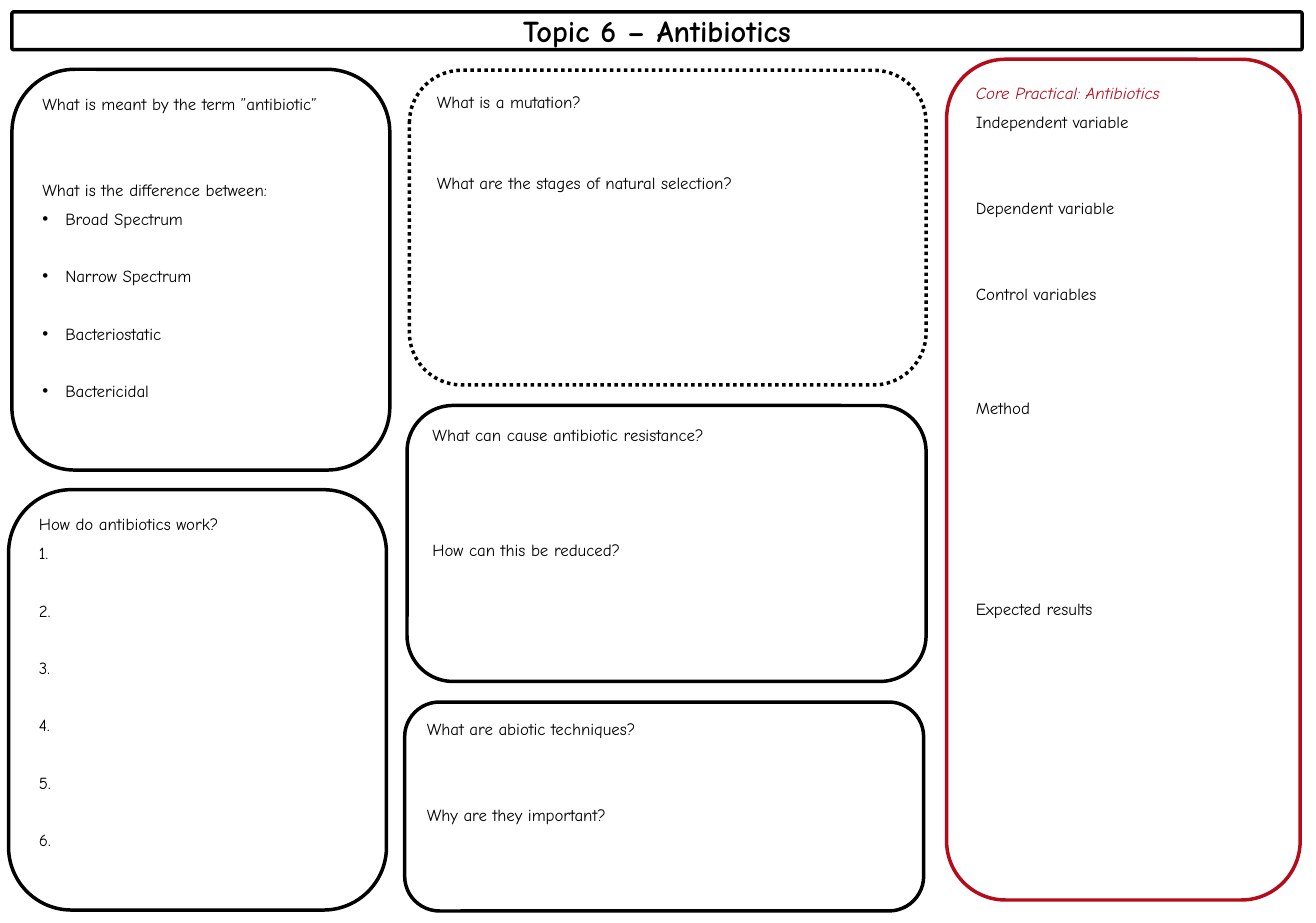
from lxml.etree import SubElement
from pptx import Presentation
from pptx.dml.color import RGBColor
from pptx.enum.dml import MSO_LINE
from pptx.enum.shapes import MSO_SHAPE
from pptx.enum.text import MSO_ANCHOR, PP_ALIGN
from pptx.oxml.ns import qn
from pptx.util import Cm, Pt

BLACK = RGBColor(0x00, 0x00, 0x00)
WHITE = RGBColor(0xFF, 0xFF, 0xFF)
RED = RGBColor(0xB5, 0x0B, 0x1B)
FONT = "Comic Neue"
LINE_HEIGHT = 12  # points taken by one line of 10 pt text


def add_frame(s, box, color=BLACK):
    """Add a rounded outline at box (left, top, width, height in cm)."""
    sp = s.shapes.add_shape(MSO_SHAPE.ROUNDED_RECTANGLE, *map(Cm, box))
    sp.shadow.inherit = False
    sp.fill.background()
    sp.line.color.rgb = color
    sp.line.width = Pt(2.08)
    sp.text_frame.word_wrap = True
    return sp


def write(p, text, size=10, color=BLACK, bold=False, italic=False):
    p.text = text
    for r in p.runs:
        r.font.name = FONT
        r.font.size = Pt(size)
        r.font.color.rgb = color
        r.font.bold = bold
        r.font.italic = italic


def add_list_mark(p, mark):
    """Give a paragraph a hanging bullet or an automatic number."""
    pPr = p._p.get_or_add_pPr()
    indent = Cm(0.48 if mark == "bullet" else 0.64)
    pPr.set("marL", str(indent))
    pPr.set("indent", str(-indent))
    if mark == "bullet":
        SubElement(pPr, qn("a:buFont")).set("typeface", "Arial")
        SubElement(pPr, qn("a:buChar")).set("char", "•")
    else:
        SubElement(pPr, qn("a:buFont")).set("typeface", FONT)
        SubElement(pPr, qn("a:buAutoNum")).set("type", "arabicPeriod")


def add_title(s, box, text):
    sp = add_frame(s, box)
    sp.adjustments[0] = 0.045
    tf = sp.text_frame
    tf.vertical_anchor = MSO_ANCHOR.MIDDLE
    p = tf.paragraphs[0]
    p.alignment = PP_ALIGN.CENTER
    write(p, text, size=18, bold=True)


def add_panel(s, box, prompts, color=BLACK, heading=None, dotted=False, spacing=5):
    """Add a panel; each prompt is (text, answer lines above it, list mark)."""
    sp = add_frame(s, box, color)
    sp.fill.solid()
    sp.fill.fore_color.rgb = WHITE
    if dotted:
        sp.line.dash_style = MSO_LINE.ROUND_DOT
    tf = sp.text_frame
    tf.vertical_anchor = MSO_ANCHOR.TOP
    p = tf.paragraphs[0]
    p.alignment = PP_ALIGN.LEFT
    if heading:
        write(p, heading, color=color, italic=True)
    for i, (text, lines, mark) in enumerate(prompts):
        if i or heading:
            p = tf.add_paragraph()
            p.alignment = PP_ALIGN.LEFT
            p.space_before = Pt(lines * (LINE_HEIGHT + spacing) + spacing)
        write(p, text)
        if mark:
            add_list_mark(p, mark)


def main():
    prs = Presentation()
    prs.slide_width, prs.slide_height = Cm(27.51), Cm(19.3)
    s = prs.slides.add_slide(prs.slide_layouts[6])

    add_title(s, (0.25, 0.25, 26.97, 0.79), "Topic 6 – Antibiotics")

    # Left column
    add_panel(s, (0.25, 1.45, 7.9, 8.38), [
        ("What is meant by the term ”antibiotic”", 0, None),
        ("What is the difference between:", 2, None),
        ("Broad Spectrum", 0, "bullet"),
        ("Narrow Spectrum", 1, "bullet"),
        ("Bacteriostatic", 1, "bullet"),
        ("Bactericidal", 1, "bullet"),
    ])
    steps = [(" ", min(i, 1), "number") for i in range(6)]
    add_panel(s, (0.18, 10.24, 7.9, 8.79),
              [("How do antibiotics work?", 0, None)] + steps)

    # Middle column
    add_panel(s, (8.56, 1.47, 10.8, 6.58), [
        ("What is a mutation?", 0, None),
        ("What are the stages of natural selection?", 3, None),
    ], dotted=True, spacing=0)
    add_panel(s, (8.51, 8.48, 10.85, 5.77), [
        ("What can cause antibiotic resistance?", 0, None),
        ("How can this be reduced?", 3, None),
    ])
    add_panel(s, (8.46, 14.68, 10.85, 4.37), [
        ("What are abiotic techniques?", 0, None),
        ("Why are they important?", 2, None),
    ])

    # Right column
    add_panel(s, (19.79, 1.24, 7.39, 17.58), [
        ("Independent variable", 0, None),
        ("Dependent variable", 2, None),
        ("Control variables", 2, None),
        ("Method", 3, None),
        ("Expected results", 6, None),
    ], color=RED, heading="Core Practical: Antibiotics")

    prs.save("out.pptx")


if __name__ == "__main__":
    main()
